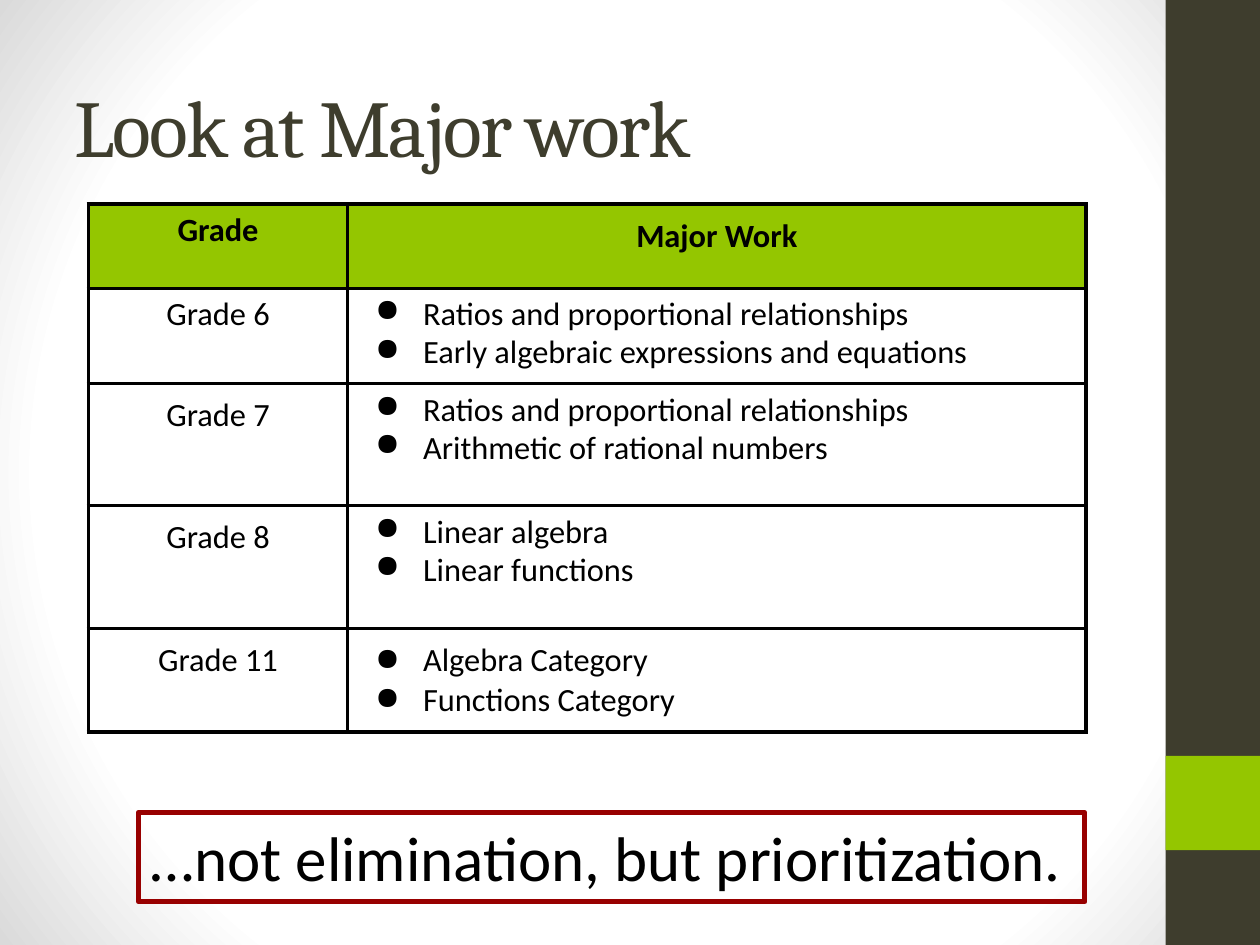
from dataclasses import dataclass

from lxml.etree import SubElement
from pptx import Presentation
from pptx.dml.color import RGBColor
from pptx.enum.shapes import MSO_SHAPE
from pptx.enum.text import MSO_ANCHOR, PP_ALIGN
from pptx.oxml import parse_xml
from pptx.oxml.ns import qn
from pptx.util import Cm, Pt


@dataclass(frozen=True)
class Theme:
    dark: str = "3E3D2D"
    accent: str = "94C600"
    ink: str = "000000"
    callout: str = "980000"
    paper: str = "FFFFFF"
    edge: str = "DADADA"
    heading_font: str = "Cambria"
    body_font: str = "Calibri"
    title_size: float = 46
    callout_size: float = 36
    table_size: float = 18.5
    border: float = 2.25
    callout_border: float = 3


THEME = Theme()
TIGHT = {"line_spacing": 0.8, "space_before": 3.7}
LOOSE = {}

# Grade, its topics, row height in cm, spacing of the grade and of the topics
GRADES = [
    ("Grade 6", ["Ratios and proportional relationships",
                 "Early algebraic expressions and equations"], 1.92, TIGHT, TIGHT),
    ("Grade 7", ["Ratios and proportional relationships",
                 "Arithmetic of rational numbers"], 2.46, LOOSE, TIGHT),
    ("Grade 8", ["Linear algebra", "Linear functions"], 2.48, LOOSE, TIGHT),
    ("Grade 11", ["Algebra Category", "Functions Category"], 2.09, LOOSE, LOOSE),
]


def add_bullet(paragraph):
    props = paragraph._p.get_or_add_pPr()
    props.set("marL", str(Cm(1.27)))
    props.set("indent", str(-Cm(0.97)))
    color = SubElement(props, qn("a:buClr"))
    SubElement(color, qn("a:srgbClr"), val=THEME.ink)
    SubElement(props, qn("a:buSzPct"), val="97000")
    SubElement(props, qn("a:buChar"), char="●")


def write(frame, lines, *, size, font=THEME.body_font, color=THEME.ink, bold=False,
          align=PP_ALIGN.LEFT, line_spacing=1.0, space_before=0, tracking=0, bullets=False):
    """Fill a text frame with one formatted paragraph per line."""
    for index, line in enumerate(lines):
        paragraph = frame.paragraphs[0] if index == 0 else frame.add_paragraph()
        paragraph.alignment = align
        paragraph.line_spacing = line_spacing
        paragraph.space_before = Pt(space_before)
        if bullets:
            add_bullet(paragraph)
        run = paragraph.add_run()
        run.text = line
        run.font.name = font
        run.font.size = Pt(size)
        run.font.bold = bold
        run.font.color.rgb = RGBColor.from_string(color)
        if tracking:
            run.font._element.set("spc", str(tracking))


class SlideBuilder:
    def __init__(self, slide, theme):
        self.slide = slide
        self.theme = theme

    def background(self):
        self.slide.background.fill.solid()
        props = self.slide.element.find(".//" + qn("p:bgPr"))
        stops = [(0, self.theme.paper), (75, self.theme.paper), (100, self.theme.edge)]
        stop_xml = "".join(f'<a:gs pos="{position * 1000}"><a:srgbClr val="{color}"/></a:gs>'
                           for position, color in stops)
        gradient = parse_xml(
            '<a:gradFill xmlns:a="http://schemas.openxmlformats.org/drawingml/2006/main" '
            f'rotWithShape="1"><a:gsLst>{stop_xml}</a:gsLst><a:path path="circle">'
            '<a:fillToRect l="50000" t="50000" r="50000" b="50000"/></a:path></a:gradFill>')
        props.replace(props.find(qn("a:solidFill")), gradient)

    def block(self, left, top, width, height, color):
        block = self.slide.shapes.add_shape(
            MSO_SHAPE.RECTANGLE, Cm(left), Cm(top), Cm(width), Cm(height))
        block.shadow.inherit = False
        block.fill.solid()
        block.fill.fore_color.rgb = RGBColor.from_string(color)
        block.line.fill.background()

    def title(self, text, left, top, width, height):
        title = self.slide.shapes.title
        title.left, title.top = Cm(left), Cm(top)
        title.width, title.height = Cm(width), Cm(height)
        title.text_frame.vertical_anchor = MSO_ANCHOR.MIDDLE
        write(title.text_frame, [text], size=self.theme.title_size,
              font=self.theme.heading_font, color=self.theme.dark, tracking=-100)

    def callout(self, text, left, top, width, height):
        callout = self.slide.shapes.add_textbox(Cm(left), Cm(top), Cm(width), Cm(height))
        callout.line.color.rgb = RGBColor.from_string(self.theme.callout)
        callout.line.width = Pt(self.theme.callout_border)
        callout.text_frame.word_wrap = True
        write(callout.text_frame, [text], size=self.theme.callout_size)

    def cell(self, cell, lines, fill=None, **text_format):
        cell.margin_left = cell.margin_right = Cm(0.25)
        cell.margin_top = cell.margin_bottom = Cm(0.25)
        props = cell._tc.get_or_add_tcPr()
        for side in ("a:lnL", "a:lnR", "a:lnT", "a:lnB"):
            border = SubElement(props, qn(side), w=str(Pt(self.theme.border)))
            paint = SubElement(border, qn("a:solidFill"))
            SubElement(paint, qn("a:srgbClr"), val=self.theme.ink)
        if fill:
            cell.fill.solid()
            cell.fill.fore_color.rgb = RGBColor.from_string(fill)
        else:
            cell.fill.background()
        write(cell.text_frame, lines, size=self.theme.table_size, **text_format)

    def grade_table(self, left, top, widths, header_height):
        heights = [header_height] + [grade[2] for grade in GRADES]
        table = self.slide.shapes.add_table(
            len(heights), len(widths), Cm(left), Cm(top),
            Cm(sum(widths)), Cm(sum(heights))).table
        for column, width in zip(table.columns, widths):
            column.width = Cm(width)
        for row, height in zip(table.rows, heights):
            row.height = Cm(height)

        header = {"fill": self.theme.accent, "bold": True, "align": PP_ALIGN.CENTER}
        self.cell(table.cell(0, 0), ["Grade"], **header, **TIGHT)
        self.cell(table.cell(0, 1), ["Major Work"], **header)
        for row, (grade, topics, _, grade_spacing, topic_spacing) in enumerate(GRADES, 1):
            self.cell(table.cell(row, 0), [grade], align=PP_ALIGN.CENTER, **grade_spacing)
            self.cell(table.cell(row, 1), topics, bullets=True, **topic_spacing)


def main():
    deck = Presentation()
    deck.slide_width, deck.slide_height = Cm(25.4), Cm(19.05)
    title_only = deck.slide_layouts[5]
    builder = SlideBuilder(deck.slides.add_slide(title_only), THEME)

    # Backdrop and side band
    builder.background()
    builder.block(23.5, 0, 1.9, 19.05, THEME.dark)
    builder.block(23.5, 15.24, 1.9, 1.9, THEME.accent)

    # Content
    builder.title("Look at Major work", 1.24, 0.94, 21.16, 3.18)
    builder.callout("…not elimination, but prioritization.", 2.79, 16.38, 19.08, 1.8)
    builder.grade_table(1.78, 4.11, [5.23, 14.88], header_height=1.7)

    deck.save("out.pptx")


if __name__ == "__main__":
    main()
